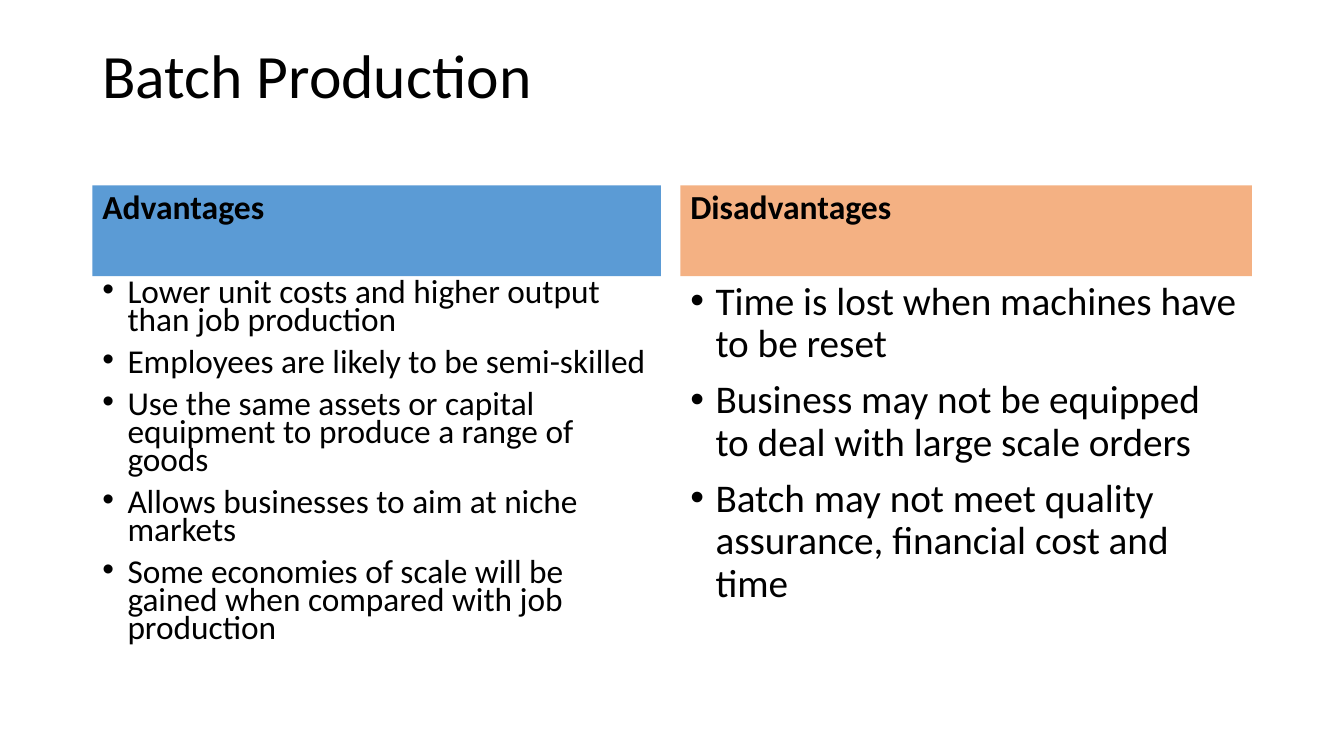
from lxml import etree
from pptx import Presentation
from pptx import util as u
from pptx.dml.color import RGBColor
from pptx.enum import shapes, text
from pptx.oxml.ns import qn

COLUMNS, ROWS = 160, 90
LEFT = 11
TITLE_TOP, HEADING_TOP, LIST_TOP = 4.8, 22.08, 32.88
HEADING_HEIGHT, LIST_HEIGHT = LIST_TOP - HEADING_TOP, 48.36

# Each side: left column, width, heading, fill, list size, line spacing, points
SIDES = [
    (LEFT, 67.68, "Advantages", "5B9BD5", 23.8, 0.7, [
        "Lower unit costs and higher output than job production",
        "Employees are likely to be semi-skilled",
        "Use the same assets or capital equipment to produce a range of goods",
        "Allows businesses to aim at niche markets",
        "Some economies of scale will be gained when compared with job production",
    ]),
    (81, 68.04, "Disadvantages", "F4B183", 28, 0.9, [
        "Time is lost when machines have to be reset",
        "Business may not be equipped to deal with large scale orders",
        "Batch may not meet quality assurance, financial cost and time",
    ]),
]


def colour(value):
    return RGBColor.from_string(value)


def write(para, words, size=24, bold=False, spacing=0.9, before=0, bullet=False,
          font="Calibri", ink="000000"):
    para.alignment = text.PP_ALIGN.LEFT
    para.line_spacing = spacing
    para.space_before = u.Pt(before)
    span = para.add_run()
    span.text = words
    span.font.name = font
    span.font.size = u.Pt(size)
    span.font.bold = bold
    span.font.color.rgb = colour(ink)
    if bullet:
        properties = para._p.get_or_add_pPr()
        properties.set("marL", str(u.Inches(0.25)))
        properties.set("indent", str(-u.Inches(0.25)))
        etree.SubElement(properties, qn("a:buFont")).set("typeface", "Arial")
        etree.SubElement(properties, qn("a:buChar")).set("char", "•")


class Slide:
    def __init__(self, deck):
        self.column = deck.slide_width / COLUMNS
        self.row = deck.slide_height / ROWS
        self.page = deck.slides.add_slide(deck.slide_layouts[6])

    def place(self, left, top, width, height):
        return (round(left * self.column), round(top * self.row),
                round(width * self.column), round(height * self.row))

    def words(self, area, lines, **style):
        box = self.page.shapes.add_textbox(*self.place(*area))
        self.fill_frame(box.text_frame, lines, **style)

    def heading(self, area, words, fill):
        box = self.page.shapes.add_shape(
            shapes.MSO_SHAPE.RECTANGLE, *self.place(*area))
        box.shadow.inherit = False
        box.fill.solid()
        box.fill.fore_color.rgb = colour(fill)
        box.line.fill.background()
        self.fill_frame(box.text_frame, [words], bold=True, before=10)

    def fill_frame(self, frame, lines, **style):
        frame.word_wrap = True
        frame.vertical_anchor = text.MSO_ANCHOR.TOP
        for index, line in enumerate(lines):
            para = frame.add_paragraph() if index else frame.paragraphs[0]
            write(para, line, **style)


def main():
    deck = Presentation()
    deck.slide_width, deck.slide_height = u.Inches(13.33), u.Inches(7.5)
    slide = Slide(deck)

    # Title
    slide.words((LEFT, TITLE_TOP, 138, 17.4), ["Batch Production"], size=44)

    # Two sides, each a coloured heading above a bulleted list
    for left, width, heading, fill, size, spacing, points in SIDES:
        slide.heading((left, HEADING_TOP, width, HEADING_HEIGHT), heading, fill)
        slide.words((left, LIST_TOP, width, LIST_HEIGHT), points, size=size,
                    spacing=spacing, before=10, bullet=True)

    deck.save("out.pptx")


if __name__ == "__main__":
    main()
